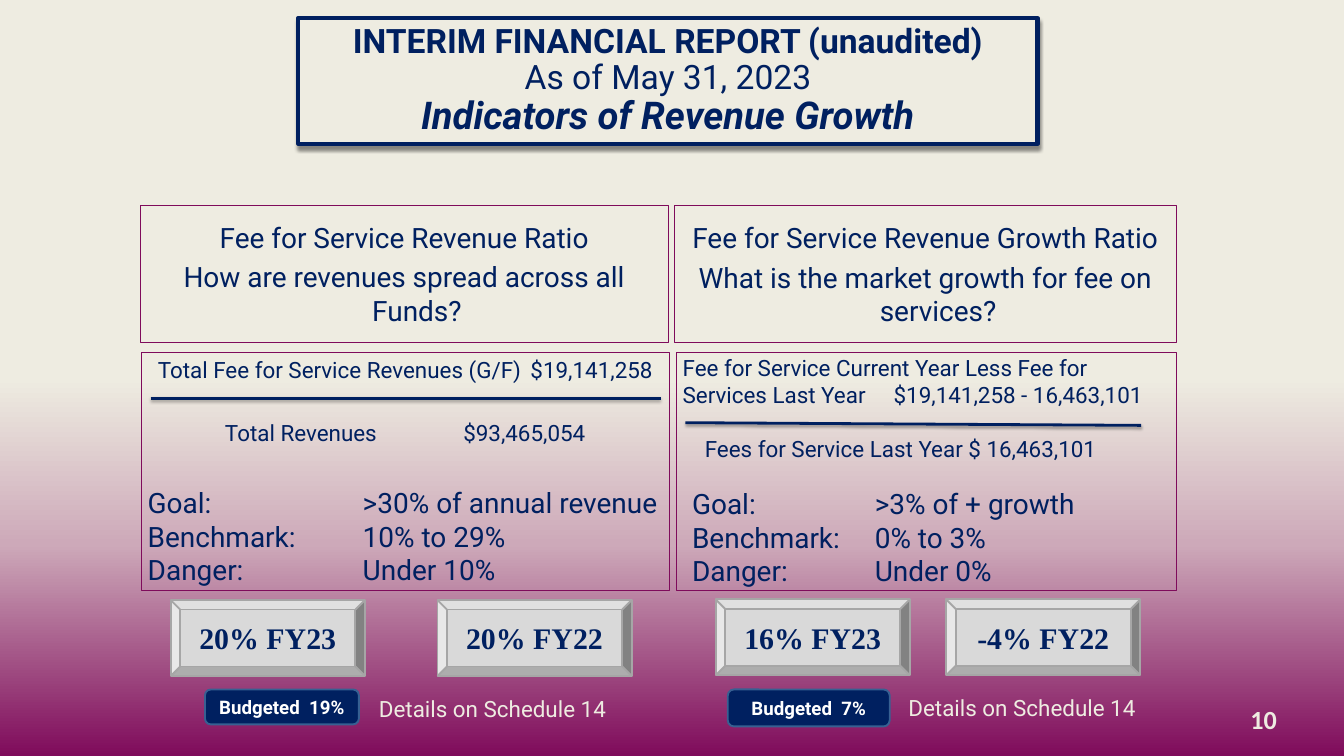
from copy import deepcopy
from dataclasses import dataclass

import pptx
from lxml import etree
from pptx.dml.color import RGBColor
from pptx.enum.shapes import MSO_CONNECTOR, MSO_SHAPE
from pptx.enum.text import MSO_ANCHOR, PP_ALIGN
from pptx.oxml.ns import qn
from pptx.util import Inches, Pt


@dataclass(frozen=True)
class Theme:
    navy: str = "002060"
    cream: str = "EEECE1"
    rose: str = "CDA9B9"
    plum: str = "7F0B5B"
    blue: str = "376092"
    silver: str = "D9D9D9"
    grey: str = "A6A6A6"
    white: str = "FFFFFF"
    body: str = "Roboto"
    serif: str = "Times New Roman"
    number: str = "Calibri"
    title_size: float = 36
    subject_size: float = 41
    score_size: float = 32
    panel_size: float = 30
    page_size: float = 28
    formula_size: float = 24
    badge_size: float = 20


THEME = Theme()


@dataclass(frozen=True)
class Box:
    left: float
    top: float
    width: float
    height: float

    def lengths(self) -> tuple:
        return tuple(Inches(v) for v in (self.left, self.top, self.width, self.height))


@dataclass(frozen=True)
class Formula:
    """A fraction: its two lines, their indents, the tab stop and the bar."""
    box: Box
    lines: tuple
    indents: tuple
    tab: float
    tab_align: str
    gaps: tuple
    bar: tuple


@dataclass(frozen=True)
class Indicator:
    heading_box: Box
    heading: tuple
    detail_box: Box
    formula: Formula
    limits_box: Box
    limits: tuple
    limits_tab: float
    scores: tuple
    scores_top: float
    badge_box: Box
    badge: str
    schedule_box: Box


INDICATORS = (
    Indicator(
        Box(2.09, 3.06, 7.85, 2.03),
        ("Fee for Service Revenue Ratio", "How are revenues spread across all Funds?"),
        Box(2.1, 5.25, 7.86, 3.54),
        Formula(Box(2.1, 5.25, 7.86, 1.6),
                ("Total Fee for Service Revenues (G/F)\t$19,141,258",
                 "Total Revenues\t$93,465,054"),
                (0.15, 1.15), 7.53, "r", (3, 39), (2.24, 5.93, 9.83, 5.93)),
        Box(2.1, 7.18, 7.86, 1.62),
        ("Goal:\t>30% of annual revenue", "Benchmark:\t10% to 29%", "Danger:\tUnder 10%"),
        3.2, ((2.54, "20% FY23"), (6.51, "20% FY22")), 8.93,
        Box(3.05, 10.26, 2.29, 0.52), "Budgeted  19%", Box(5.54, 10.3, 3.88, 0.5)),
    Indicator(
        Box(10.04, 3.06, 7.46, 2.04),
        ("Fee for Service Revenue Growth Ratio",
         "What is the market growth for fee on services?"),
        Box(10.06, 5.25, 7.44, 3.54),
        Formula(Box(10.06, 5.22, 7.44, 1.72),
                ("Fee for Service Current Year Less Fee for Services Last Year"
                 "\t$19,141,258 - 16,463,101",
                 "Fees for Service Last Year $ 16,463,101"),
                (0, 0.33), 3.14, "l", (0, 29.5), (10.2, 6.29, 16.98, 6.33)),
        Box(10.2, 7.19, 7.06, 1.62),
        ("Goal:\t>3% of + growth", "Benchmark:\t0% to 3%", "Danger:\tUnder 0%"),
        2.72, ((10.65, "16% FY23"), (14.08, "-4% FY22")), 8.92,
        Box(10.83, 10.26, 2.41, 0.55), "Budgeted  7%", Box(13.42, 10.28, 3.83, 0.5)),
)


def rgb(color: str) -> RGBColor:
    return RGBColor.from_string(color)


def paint_background(slide) -> None:
    fill = slide.background.fill
    fill.gradient()
    fill.gradient_angle = 270
    stops = slide._element.find(".//" + qn("a:gsLst"))
    stops.append(deepcopy(stops[-1]))
    colors = ((0.5, THEME.cream), (0.72, THEME.rose), (1, THEME.plum))
    for stop, (position, color) in zip(fill.gradient_stops, colors):
        stop.position = position
        stop.color.rgb = rgb(color)


def add_shadow(shape, alpha: int, blur: float, distance: float) -> None:
    effects = etree.SubElement(shape._element.spPr, qn("a:effectLst"))
    shadow = etree.SubElement(effects, qn("a:outerShdw"), blurRad=str(Pt(blur)),
                              dist=str(Pt(distance)), dir="5400000", rotWithShape="0")
    black = etree.SubElement(shadow, qn("a:srgbClr"), val="000000")
    etree.SubElement(black, qn("a:alpha"), val=str(alpha * 1000))


def add_tab(paragraph, position: float, align: str = "l") -> None:
    tabs = etree.SubElement(paragraph._p.get_or_add_pPr(), qn("a:tabLst"))
    etree.SubElement(tabs, qn("a:tab"), pos=str(Inches(position)), algn=align)


def write(frame, lines: tuple, size: float, color: str = THEME.navy,
          font: str = THEME.body, bold: bool = False, align=PP_ALIGN.LEFT) -> list:
    frame.word_wrap = True
    frame.text = "\n".join(lines)
    for paragraph in frame.paragraphs:
        paragraph.alignment = align
        for run in paragraph.runs:
            run.font.size, run.font.name, run.font.bold = Pt(size), font, bold
            run.font.color.rgb = rgb(color)
    return list(frame.paragraphs)


def add_text(slide, box: Box, lines: tuple, size: float, **style) -> list:
    return write(slide.shapes.add_textbox(*box.lengths()).text_frame, lines, size, **style)


def add_block(slide, kind, box: Box, fill: str | None, line: str, width: float):
    block = slide.shapes.add_shape(kind, *box.lengths())
    block.shadow.inherit = False
    if fill:
        block.fill.solid()
        block.fill.fore_color.rgb = rgb(fill)
    else:
        block.fill.background()
    block.line.color.rgb = rgb(line)
    block.line.width = Pt(width)
    block.text_frame.vertical_anchor = MSO_ANCHOR.MIDDLE
    return block


def add_title(slide) -> None:
    block = add_block(slide, MSO_SHAPE.RECTANGLE, Box(4.44, 0.27, 11, 1.87),
                      THEME.cream, THEME.navy, 4.5)
    block._element.spPr.remove(block._element.spPr.find(qn("a:effectLst")))
    add_shadow(block, 43, 4, 4)
    frame = block.text_frame
    frame.margin_left = frame.margin_right = frame.margin_top = frame.margin_bottom = 0
    title = "INTERIM FINANCIAL REPORT (unaudited)\vAs of May 31, 2023\vIndicators of Revenue Growth"
    paragraph, = write(frame, (title,), THEME.title_size, bold=True, align=PP_ALIGN.CENTER)
    paragraph.line_spacing = 0.9
    _, date, subject = paragraph.runs
    date.font.bold = False
    subject.font.italic = True
    subject.font.size = Pt(THEME.subject_size)


def add_formula(slide, formula: Formula) -> None:
    paragraphs = add_text(slide, formula.box, formula.lines, THEME.formula_size)
    for paragraph, indent, gap in zip(paragraphs, formula.indents, formula.gaps):
        paragraph.space_before = Pt(gap)
        paragraph._p.get_or_add_pPr().set("marL", str(Inches(indent)))
        add_tab(paragraph, formula.tab, formula.tab_align)
    bar = slide.shapes.add_connector(MSO_CONNECTOR.STRAIGHT, *map(Inches, formula.bar))
    bar.line.color.rgb = rgb(THEME.navy)
    bar.line.width = Pt(3)
    add_shadow(bar, 35, 3.1, 1.8)


def add_indicator(slide, indicator: Indicator) -> None:
    heading = add_block(slide, MSO_SHAPE.RECTANGLE, indicator.heading_box,
                        None, THEME.plum, 0.75)
    for paragraph in write(heading.text_frame, indicator.heading, THEME.panel_size,
                           align=PP_ALIGN.CENTER):
        paragraph.space_before = Pt(6)
        properties = paragraph._p.get_or_add_pPr()
        properties.set("marL", str(Inches(0.38)))
        properties.set("indent", str(Inches(-0.38)))
    add_block(slide, MSO_SHAPE.RECTANGLE, indicator.detail_box, None, THEME.plum, 0.75)
    add_formula(slide, indicator.formula)
    for paragraph in add_text(slide, indicator.limits_box, indicator.limits, THEME.panel_size):
        add_tab(paragraph, indicator.limits_tab)
    for left, score in indicator.scores:
        button = add_block(slide, MSO_SHAPE.BEVEL, Box(left, indicator.scores_top, 2.89, 1.13),
                           THEME.silver, THEME.grey, 2)
        write(button.text_frame, (score,), THEME.score_size, font=THEME.serif,
              bold=True, align=PP_ALIGN.CENTER)
    badge = add_block(slide, MSO_SHAPE.ROUNDED_RECTANGLE, indicator.badge_box,
                      THEME.navy, THEME.blue, 2)
    write(badge.text_frame, (indicator.badge,), THEME.badge_size, color=THEME.white,
          bold=True, align=PP_ALIGN.CENTER)
    add_text(slide, indicator.schedule_box, ("Details on Schedule 14",),
             THEME.formula_size, color=THEME.cream)


def add_page_number(slide) -> None:
    frame = slide.shapes.add_textbox(*Box(18.58, 10.46, 0.42, 0.47).lengths()).text_frame
    frame.margin_left = frame.margin_right = frame.margin_top = frame.margin_bottom = 0
    write(frame, ("10",), THEME.page_size, color=THEME.cream, font=THEME.number,
          bold=True, align=PP_ALIGN.RIGHT)


def main() -> None:
    deck = pptx.Presentation()
    deck.slide_width, deck.slide_height = Inches(20), Inches(11.25)
    slide = deck.slides.add_slide(deck.slide_layouts[6])
    paint_background(slide)
    add_title(slide)
    for indicator in INDICATORS:
        add_indicator(slide, indicator)
    add_page_number(slide)
    deck.save("out.pptx")


if __name__ == "__main__":
    main()
